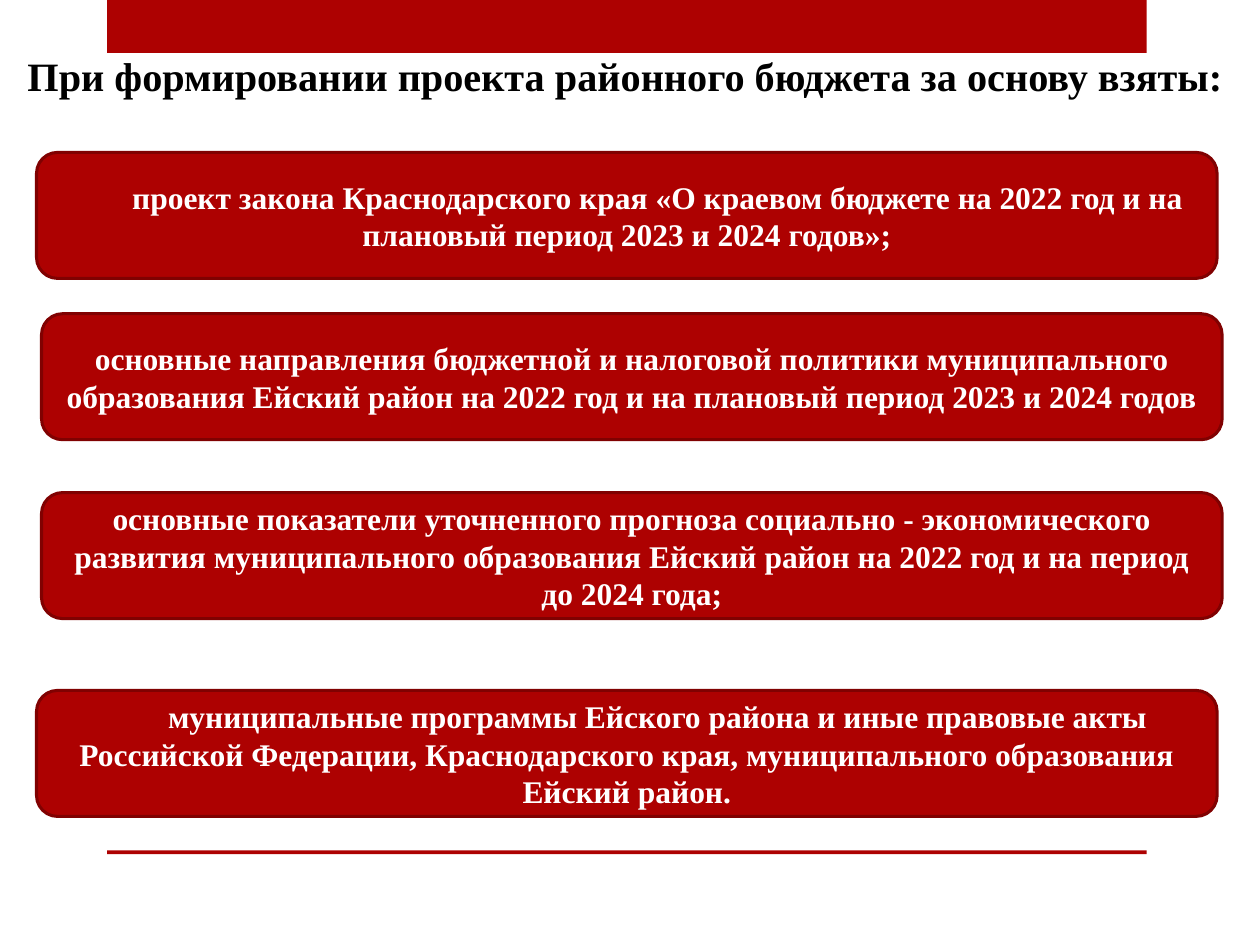
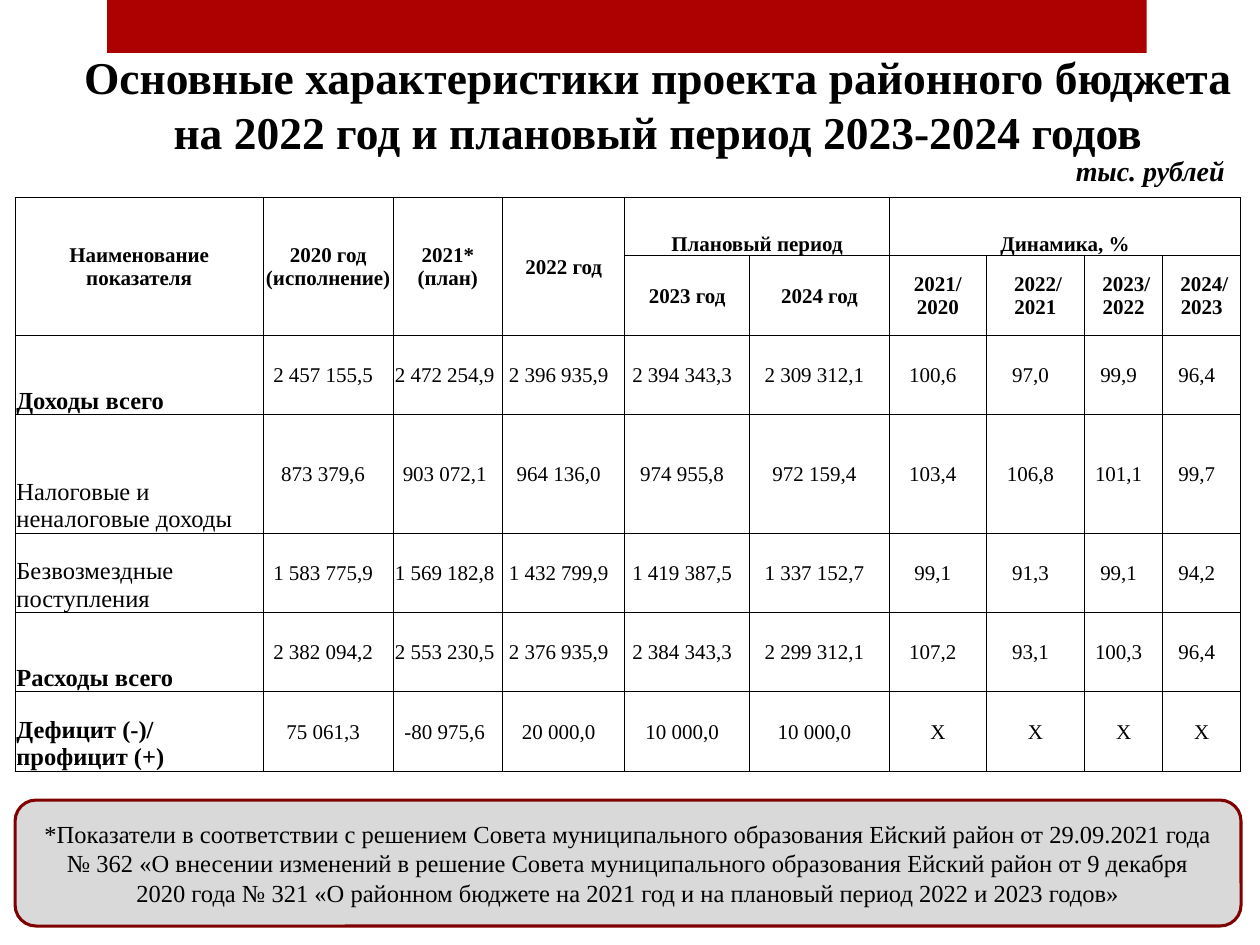
from lxml.etree import SubElement
from pptx import Presentation
from pptx.dml.color import RGBColor
from pptx.enum.shapes import MSO_SHAPE
from pptx.enum.text import MSO_ANCHOR, PP_ALIGN
from pptx.oxml import parse_xml
from pptx.oxml.ns import nsdecls, qn
from pptx.util import Inches, Pt

# Shared look
RED = RGBColor(0xAD, 0x01, 0x01)
DARK_RED = RGBColor(0x80, 0x01, 0x01)
GREY = RGBColor(0xD9, 0xD9, 0xD9)
BLACK = RGBColor(0, 0, 0)
WHITE = RGBColor(0xFF, 0xFF, 0xFF)
FONT = "Times New Roman"

# Grid of 100 columns by 75 rows
WIDTH, HEIGHT = Inches(10), Inches(7.5)
COL, ROW = WIDTH / 100, HEIGHT / 75
BAND_LEFT, BAND_COLS = 8.5, 82.5
BOX_ROWS = 10
TABLE_LEFT, TABLE_TOP, TABLE_COLS = 1.2, 15.7, 97.3

# Slide 1: (left, top, first line indent in columns, text)
FOUNDATIONS = [
    (2.9, 12.1, 4.9, "проект закона Краснодарского края «О краевом бюджете на 2022 год "
     "и на плановый период 2023 и 2024 годов»;"),
    (3.3, 24.9, 0, "основные направления бюджетной и налоговой политики муниципального "
     "образования Ейский район на 2022 год и на плановый период 2023 и 2024 годов"),
    (3.3, 39.1, 0, "основные показатели уточненного прогноза социально - экономического "
     "развития муниципального образования Ейский район на 2022 год и на период "
     "до 2024 года;"),
    (2.9, 54.8, 4.9, "муниципальные программы Ейского района и иные правовые акты "
     "Российской Федерации, Краснодарского края, муниципального образования "
     "Ейский район."),
]

# Slide 2: budget table
COLUMN_WIDTHS = [19.7, 10.3, 8.7, 9.7, 9.9, 11.1, 7.7, 7.8, 6.2, 6.2]
ROW_HEIGHTS = [4.6, 6.3, 6.3, 9.4, 6.3, 6.3, 6.3]
HEADINGS = [  # row, column, rows spanned, columns spanned, text
    (0, 0, 2, 1, "Наименование показателя"),
    (0, 1, 2, 1, "2020 год (исполнение)"),
    (0, 2, 2, 1, "2021* (план)"),
    (0, 3, 2, 1, "2022 год"),
    (0, 4, 1, 2, "Плановый период"),
    (0, 6, 1, 4, "Динамика, %"),
    (1, 4, 1, 1, "2023 год"),
    (1, 5, 1, 1, "2024 год"),
    (1, 6, 1, 1, "2021/\v2020"),
    (1, 7, 1, 1, " 2022/\v2021"),
    (1, 8, 1, 1, " 2023/\v2022"),
    (1, 9, 1, 1, " 2024/\v2023"),
]
INDICATORS = [  # name, bold, values
    ("Доходы всего", True,
     "2 457 155,5|2 472 254,9|2 396 935,9|2 394 343,3|2 309 312,1|100,6|97,0|99,9|96,4"),
    ("Налоговые и неналоговые доходы", False,
     "873 379,6|903 072,1|964 136,0|974 955,8|972 159,4|103,4|106,8|101,1|99,7"),
    ("Безвозмездные поступления", False,
     "1 583 775,9|1 569 182,8|1 432 799,9|1 419 387,5|1 337 152,7|99,1|91,3|99,1|94,2"),
    ("Расходы всего", True,
     "2 382 094,2|2 553 230,5|2 376 935,9|2 384 343,3|2 299 312,1|107,2|93,1|100,3|96,4"),
    ("Дефицит (-)/ профицит (+)", True,
     "75 061,3|-80 975,6|20 000,0|10 000,0|10 000,0|Х|Х|Х|Х"),
]


def area(left, top, cols, rows):
    return int(left * COL), int(top * ROW), int(cols * COL), int(rows * ROW)


def write(frame, text, align, color=BLACK, **font_values):
    frame.text = text
    paragraph = frame.paragraphs[0]
    paragraph.alignment = align
    for run in paragraph.runs:
        run.font.color.rgb = color
        for name, value in {"name": FONT, **font_values}.items():
            setattr(run.font, name, value)
    return paragraph


def add_label(slide, place, text, align=PP_ALIGN.LEFT, wrap=True, **font_values):
    frame = slide.shapes.add_textbox(*area(*place)).text_frame
    frame.word_wrap = wrap
    write(frame, text, align, bold=True, **font_values)


def add_band(slide, top, rows):
    band = slide.shapes.add_shape(MSO_SHAPE.RECTANGLE, *area(BAND_LEFT, top, BAND_COLS, rows))
    band.shadow.inherit = False
    band.fill.solid()
    band.fill.fore_color.rgb = RED
    band.line.fill.background()


def add_box(slide, place, text, fill, indent=0, **font_values):
    box = slide.shapes.add_shape(MSO_SHAPE.ROUNDED_RECTANGLE, *area(*place))
    box.shadow.inherit = False
    box.fill.solid()
    box.fill.fore_color.rgb = fill
    box.line.color.rgb = DARK_RED
    box.line.width = Pt(1.75)
    box.text_frame.word_wrap = True
    paragraph = write(box.text_frame, text, PP_ALIGN.CENTER, **font_values)
    if indent:
        paragraph._p.get_or_add_pPr().set("indent", str(int(indent * COL)))


def add_borders(cell):
    properties = cell._tc.get_or_add_tcPr()
    for position, side in enumerate(("lnL", "lnR", "lnT", "lnB")):
        border = parse_xml(f'<a:{side} {nsdecls("a")} w="{Pt(0.5)}"/>')
        paint = SubElement(border, qn("a:solidFill"))
        SubElement(paint, qn("a:srgbClr")).set("val", str(BLACK))
        properties.insert(position, border)


def fill_cell(cell, text, align=PP_ALIGN.CENTER, anchor=MSO_ANCHOR.MIDDLE,
              right=0.1, size=12, bold=False):
    cell.vertical_anchor = anchor
    cell.margin_right = int(right * COL)
    write(cell.text_frame, text, align, size=Pt(size), bold=bold)


def add_budget_table(slide):
    place = area(TABLE_LEFT, TABLE_TOP, TABLE_COLS, sum(ROW_HEIGHTS))
    table = slide.shapes.add_table(len(ROW_HEIGHTS), len(COLUMN_WIDTHS), *place).table
    table.first_row = table.horz_banding = False
    for column, width in zip(table.columns, COLUMN_WIDTHS):
        column.width = int(width * COL)
    for row, height in zip(table.rows, ROW_HEIGHTS):
        row.height = int(height * ROW)
    for cell in table.iter_cells():
        cell.margin_left = cell.margin_right = cell.margin_top = int(0.1 * COL)
        cell.margin_bottom = 0
        cell.fill.background()
        add_borders(cell)

    # Headings
    for row, column, rows, columns, text in HEADINGS:
        cell = table.cell(row, column)
        if rows * columns > 1:
            cell.merge(table.cell(row + rows - 1, column + columns - 1))
        anchor = MSO_ANCHOR.BOTTOM if columns > 1 else MSO_ANCHOR.MIDDLE
        fill_cell(cell, text, anchor=anchor, bold=True)

    # Indicators: numbers sit slightly left of the centre
    for row, (name, bold, values) in enumerate(INDICATORS, 2):
        fill_cell(table.cell(row, 0), name, PP_ALIGN.LEFT, MSO_ANCHOR.BOTTOM,
                  size=14, bold=bold)
        for column, value in enumerate(values.split("|"), 1):
            right = 0.1 if value == "Х" else 0.6 if column == 2 else 0.9
            fill_cell(table.cell(row, column), value, right=right)


def build_foundations(slide):
    add_band(slide, 0, 4.2)
    add_band(slide, 67.5, 0.3)
    add_label(slide, (1.2, 3.6, 100.3, 4.9),
              "При формировании проекта районного бюджета за основу взяты:", size=Pt(23))
    for left, top, indent, text in FOUNDATIONS:
        add_box(slide, (left, top, 93.7, BOX_ROWS), text, RED, indent,
                color=WHITE, size=Pt(18), bold=True)


def build_characteristics(slide):
    add_band(slide, 0, 4.2)
    add_label(slide, (4.4, 3.4, 95.7, 9.8),
              "Основные характеристики проекта районного бюджета "
              "на 2022 год и плановый период 2023-2024 годов",
              PP_ALIGN.CENTER, size=Pt(26))
    add_label(slide, (84.4, 11.7, 14, 3.7), "тыс. рублей", wrap=False,
              size=Pt(16), italic=True)
    add_box(slide, (TABLE_LEFT, 63.5, TABLE_COLS, BOX_ROWS),
            "*Показатели в соответствии с решением Совета муниципального образования "
            "Ейский район от 29.09.2021 года № 362 «О внесении изменений в решение "
            "Совета муниципального образования Ейский район от 9 декабря\v"
            "2020 года № 321 «О районном бюджете на 2021 год и на плановый период "
            "2022 и 2023 годов»", GREY, size=Pt(14))
    add_budget_table(slide)


def main():
    deck = Presentation()
    deck.slide_width, deck.slide_height = WIDTH, HEIGHT
    for build in (build_foundations, build_characteristics):
        build(deck.slides.add_slide(deck.slide_layouts[6]))
    deck.save("out.pptx")


if __name__ == "__main__":
    main()
